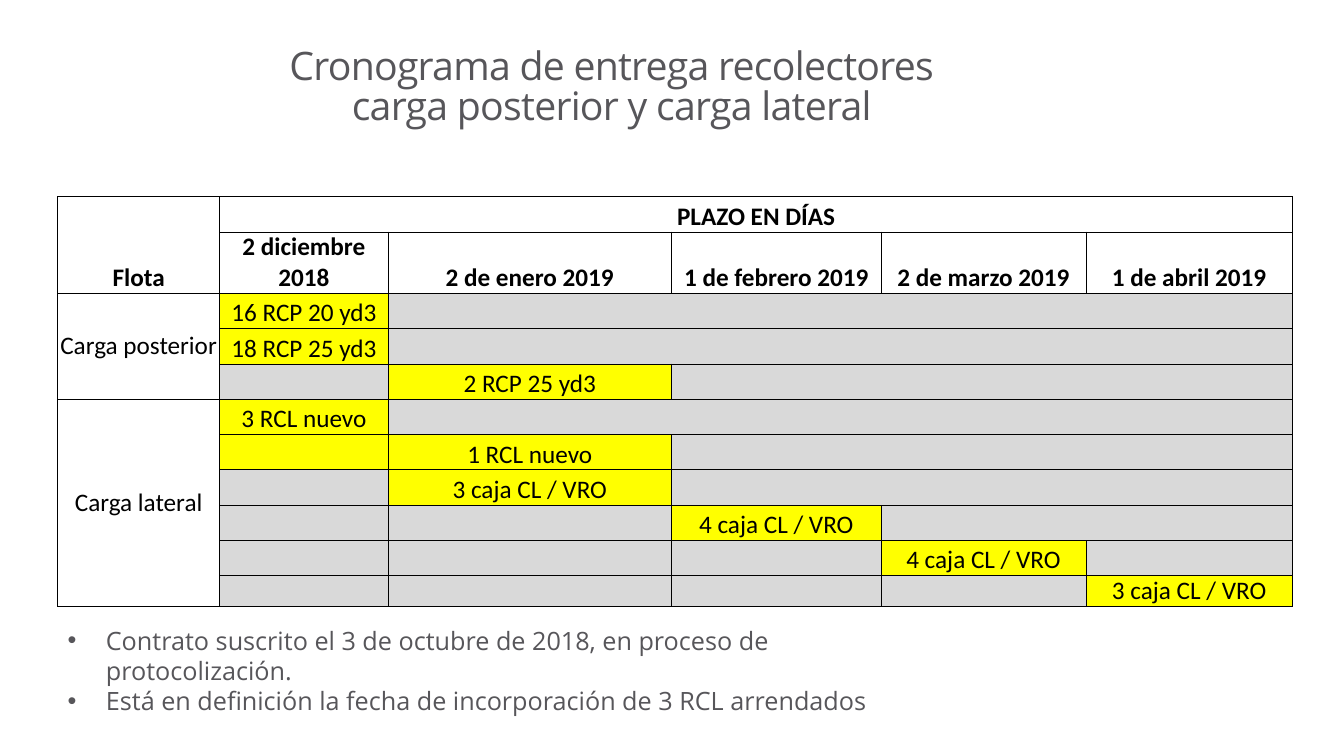
from dataclasses import dataclass

from lxml import etree
from pptx import Presentation
from pptx import util as u
from pptx.dml.color import RGBColor
from pptx.enum import text
from pptx.oxml import ns

COLORS = {"gray": "57565A", "black": "000000", "yellow": "FFFF00", "idle": "D9D9D9"}
COL_WIDTHS = [1.61, 1.67, 2.81, 2.08, 2.03, 2.05]
ROW_HEIGHTS = [0.35, 0.61] + [0.35] * 8 + [0.28]
DATES = ["2 diciembre 2018", "2 de enero 2019", "1 de febrero 2019",
         "2 de marzo 2019", "1 de abril 2019"]
NOTES = ["Contrato suscrito el 3 de octubre de 2018, en proceso de protocolización.",
         "Está en definición la fecha de incorporación de 3 RCL arrendados"]


@dataclass
class Delivery:
    label: str
    col: int
    first: int = 0  # first yellow column, when earlier than col
    merged: bool = False  # later months form one merged cell


@dataclass
class Fleet:
    name: str
    deliveries: list[Delivery]


FLEETS = [
    Fleet("Carga posterior", [
        Delivery("16 RCP 20 yd3", 1, merged=True),
        Delivery("18 RCP 25 yd3", 1, merged=True),
        Delivery("2 RCP 25 yd3", 2, merged=True),
    ]),
    Fleet("Carga lateral", [
        Delivery("3 RCL nuevo", 1, merged=True),
        Delivery("1 RCL nuevo", 2, first=1),
        Delivery("3 caja CL / VRO", 2),
        Delivery("4 caja CL / VRO", 3),
        Delivery("4 caja CL / VRO", 4),
        Delivery("3 caja CL / VRO", 5),
    ]),
]


def write(p, content: str, *, size: float = 18, font: str = "Calibri",
          color: str = "black", bold: bool = False, align=text.PP_ALIGN.CENTER,
          line: float = 1.0, tracking: float = 0) -> None:
    p.text = content
    p.alignment = align
    p.line_spacing = line
    p.space_before = u.Pt(0)
    for r in p.runs:
        r.font.size = u.Pt(size)
        r.font.name = font
        r.font.bold = bold
        r.font.color.rgb = RGBColor.from_string(COLORS[color])
        if tracking:
            r.font._element.set("spc", str(int(tracking * 100)))


def place(sp, left: float, top: float, width: float, height: float):
    sp.left, sp.top = u.Inches(left), u.Inches(top)
    sp.width, sp.height = u.Inches(width), u.Inches(height)
    tf = sp.text_frame
    tf.word_wrap = True
    tf.auto_size = text.MSO_AUTO_SIZE.NONE
    return tf


def set_bullet(p) -> None:
    pPr = p._p.get_or_add_pPr()
    pPr.set("marL", str(u.Inches(0.38)))
    pPr.set("indent", str(-u.Inches(0.38)))
    etree.SubElement(pPr, ns.qn("a:buFont")).set("typeface", "Arial")
    etree.SubElement(pPr, ns.qn("a:buChar")).set("char", "•")


def set_borders(cell, sides: str) -> None:
    tcPr = cell._tc.get_or_add_tcPr()
    for i, side in enumerate("LRTB"):
        ln = etree.Element(ns.qn(f"a:ln{side}"), w=str(u.Pt(0.5)))
        if side in sides:
            fill = etree.SubElement(ln, ns.qn("a:solidFill"))
            etree.SubElement(fill, ns.qn("a:srgbClr")).set("val", COLORS["black"])
        else:
            etree.SubElement(ln, ns.qn("a:noFill"))
        tcPr.insert(i, ln)


def style_cell(cell, content: str = "", *, fill: str = "", sides: str = "LRTB",
               anchor=text.MSO_ANCHOR.BOTTOM, bold: bool = False) -> None:
    cell.margin_left = cell.margin_right = cell.margin_top = cell.margin_bottom = 0
    cell.vertical_anchor = anchor
    if fill:
        cell.fill.solid()
        cell.fill.fore_color.rgb = RGBColor.from_string(COLORS[fill])
    else:
        cell.fill.background()
    set_borders(cell, sides)
    if content:
        write(cell.text_frame.paragraphs[0], content, bold=bold)


def draw_delivery(tbl, row: int, d: Delivery) -> None:
    last = len(COL_WIDTHS) - 1
    for col in range(1, last + 1):
        active = (d.first or d.col) <= col <= d.col
        sides = "LRTB"
        if col > d.col and not d.merged:  # later months read as one open band
            sides = "TB" + "L" * (col == d.col + 1) + "R" * (col == last)
        style_cell(tbl.cell(row, col), d.label if col == d.col else "",
                   fill="yellow" if active else "idle", sides=sides)
    if d.merged:
        tbl.cell(row, d.col + 1).merge(tbl.cell(row, last))


def draw_schedule(s) -> None:
    sp = s.shapes.add_table(len(ROW_HEIGHTS), len(COL_WIDTHS), u.Inches(0.57),
                            u.Inches(1.95), u.Inches(sum(COL_WIDTHS)),
                            u.Inches(sum(ROW_HEIGHTS)))
    tbl = sp.table
    tbl.first_row = tbl.horz_banding = False
    for column, width in zip(tbl.columns, COL_WIDTHS):
        column.width = u.Inches(width)
    for row, height in zip(tbl.rows, ROW_HEIGHTS):
        row.height = u.Inches(height)

    # Header rows
    for col, date in enumerate(["", *DATES]):
        heading = {0: "Flota", 1: "PLAZO EN DÍAS"}.get(col, "")
        style_cell(tbl.cell(0, col), heading, bold=True)
        style_cell(tbl.cell(1, col), date, bold=True)
    tbl.cell(0, 0).merge(tbl.cell(1, 0))
    tbl.cell(0, 1).merge(tbl.cell(0, len(DATES)))

    # Fleet groups
    top = 2
    for fleet in FLEETS:
        for i, d in enumerate(fleet.deliveries):
            style_cell(tbl.cell(top + i, 0), "" if i else fleet.name,
                       anchor=text.MSO_ANCHOR.MIDDLE)
            draw_delivery(tbl, top + i, d)
        end = top + len(fleet.deliveries)
        tbl.cell(top, 0).merge(tbl.cell(end - 1, 0))
        top = end


def main() -> None:
    prs = Presentation()
    prs.slide_width, prs.slide_height = u.Inches(13.33), u.Inches(7.5)
    s = prs.slides.add_slide(prs.slide_layouts[1])

    # Title
    tf = place(s.shapes.title, 0.4, 0.43, 11.33, 0.89)
    tf.margin_left = tf.margin_right = tf.margin_top = tf.margin_bottom = 0
    tf.vertical_anchor = text.MSO_ANCHOR.MIDDLE
    write(tf.paragraphs[0],
          "Cronograma de entrega recolectores\vcarga posterior y carga lateral",
          size=28, font="Open Sans", color="gray", line=0.86, tracking=-0.5)

    # Delivery schedule
    draw_schedule(s)

    # Notes
    tf = place(s.placeholders[1], 0.57, 6.15, 8.77, 0.71)
    tf.vertical_anchor = text.MSO_ANCHOR.TOP
    for i, note in enumerate(NOTES):
        p = tf.add_paragraph() if i else tf.paragraphs[0]
        set_bullet(p)
        write(p, note, font="Open Sans", color="gray", align=text.PP_ALIGN.LEFT)

    prs.save("out.pptx")


if __name__ == "__main__":
    main()
